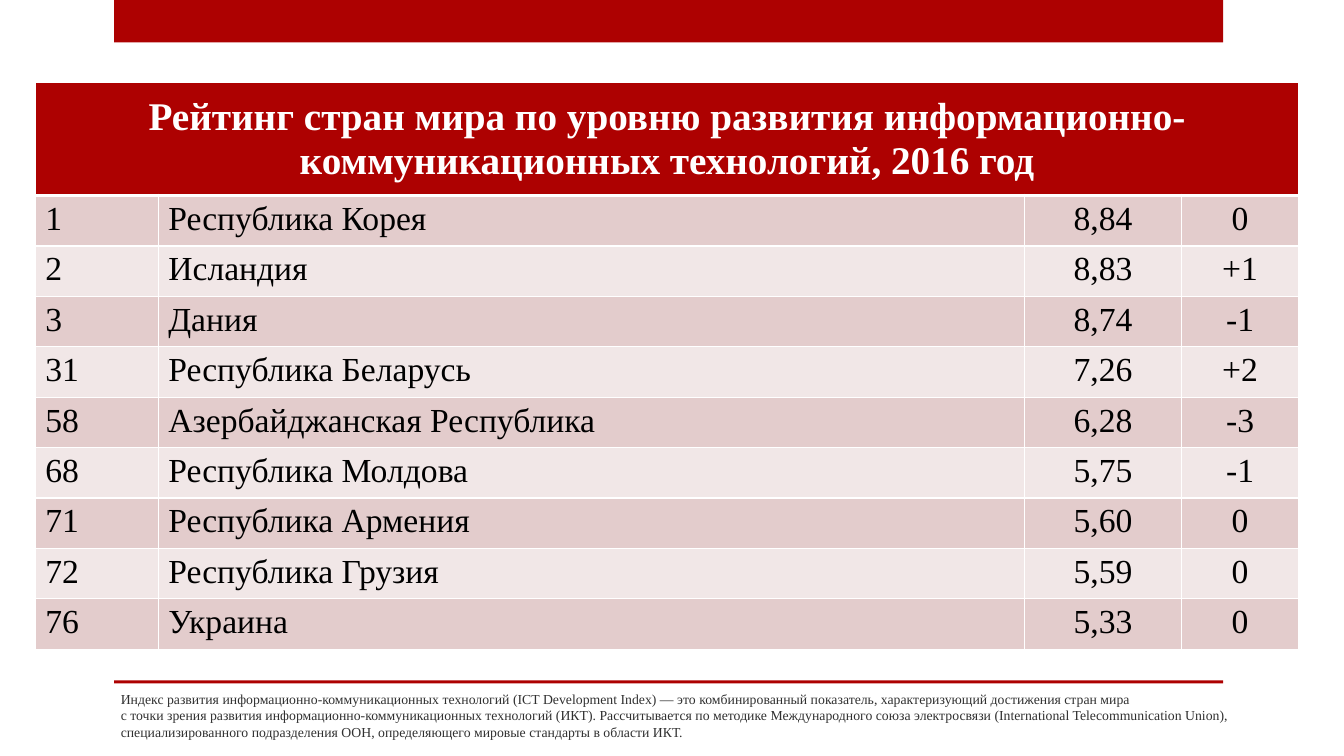
from copy import deepcopy

from lxml.etree import SubElement
from pptx import Presentation
from pptx.dml.color import RGBColor
from pptx.enum.shapes import MSO_SHAPE
from pptx.enum.text import MSO_ANCHOR, PP_ALIGN
from pptx.oxml.ns import qn
from pptx.util import Inches, Pt

WIDE, HIGH = 13.33, 7.5
RED, WHITE, BLACK, GREY = "AD0101", "FFFFFF", "000000", "303030"
BANDS = "E3CCCC", "F1E7E7"
COLS = 1.22, 8.59, 1.56, 1.16
HEAD, ROW = 1.12, 0.5
TITLE = ("Рейтинг стран мира по уровню развития "
         "информационно-коммуникационных технологий, 2016 год")
RANKS = [
    ("1", "Республика Корея", "8,84", "0"),
    ("2", "Исландия", "8,83", "+1"),
    ("3", "Дания", "8,74", "-1"),
    ("31", "Республика Беларусь", "7,26", "+2"),
    ("58", "Азербайджанская Республика", "6,28", "-3"),
    ("68", "Республика Молдова", "5,75", "-1"),
    ("71", "Республика Армения", "5,60", "0"),
    ("72", "Республика Грузия", "5,59", "0"),
    ("76", "Украина", "5,33", "0"),
]
NOTE = (
    "Индекс развития информационно-коммуникационных технологий (ICT Development Index) — "
    "это комбинированный показатель, характеризующий достижения стран мира\n"
    "с точки зрения развития информационно-коммуникационных технологий (ИКТ). "
    "Рассчитывается по методике Международного союза электросвязи "
    "(International Telecommunication Union),\n"
    "специализированного подразделения ООН, определяющего мировые стандарты в области ИКТ."
)


def paint(fill, color):
    fill.solid()
    fill.fore_color.rgb = RGBColor.from_string(color)


def write(frame, text, size=24, color=BLACK, bold=False, align=PP_ALIGN.LEFT, before=0, after=0):
    """Fill a text frame with one paragraph; newlines become line breaks."""
    para = frame.paragraphs[0]
    para.text = text
    para.alignment = align
    para.space_before, para.space_after = Pt(before), Pt(after)
    for run in para.runs:
        font = run.font
        font.name, font.size, font.bold = "Times New Roman", Pt(size), bold
        font.color.rgb = RGBColor.from_string(color)
    for gap in para._p.findall(qn("a:br")):
        gap.insert(0, deepcopy(para.runs[0]._r.rPr))


def edge(cell, low=1, top=1):
    """Draw white borders, with own widths for the bottom and top."""
    props = cell._tc.get_or_add_tcPr()
    sides = ("a:lnL", 1), ("a:lnR", 1), ("a:lnT", top), ("a:lnB", low)
    for spot, (tag, width) in enumerate(sides):
        line = SubElement(props, qn(tag), w=str(Pt(width)))
        fill = SubElement(line, qn("a:solidFill"))
        SubElement(fill, qn("a:srgbClr"), val=WHITE)
        props.insert(spot, line)


def add_bar(slide, top, high):
    side = 0.085 * WIDE
    bar = slide.shapes.add_shape(MSO_SHAPE.RECTANGLE, Inches(side), Inches(top),
                                 Inches(0.825 * WIDE), Inches(high))
    bar.shadow.inherit = False
    paint(bar.fill, RED)
    bar.line.fill.background()


def add_ranks(slide):
    table = slide.shapes.add_table(
        len(RANKS) + 1, len(COLS), Inches(0.35), Inches(0.82),
        Inches(sum(COLS)), Inches(HEAD + ROW * len(RANKS))).table
    for col, wide in zip(table.columns, COLS):
        col.width = Inches(wide)
    for num, row in enumerate(table.rows):
        row.height = Inches(ROW if num else HEAD)
    for cell in table.rows[0].cells:
        paint(cell.fill, RED)
        edge(cell, low=3)
    head = table.cell(0, 0)
    head.merge(table.cell(0, len(COLS) - 1))
    head.vertical_anchor = MSO_ANCHOR.MIDDLE
    write(head.text_frame, TITLE, size=28, color=WHITE, bold=True,
          align=PP_ALIGN.CENTER, before=6, after=6)
    for num, rank in enumerate(RANKS):
        for col, text in enumerate(rank):
            cell = table.cell(num + 1, col)
            paint(cell.fill, BANDS[num % 2])
            edge(cell, top=1 if num else 3)
            write(cell.text_frame, text,
                  align=PP_ALIGN.CENTER if col > 1 else PP_ALIGN.LEFT)


def add_note(slide):
    box = slide.shapes.add_textbox(Inches(1.1), Inches(0.91 * HIGH),
                                   Inches(11.66), Inches(0.072 * HIGH))
    frame = box.text_frame
    frame.word_wrap = True
    frame.vertical_anchor = MSO_ANCHOR.MIDDLE
    write(frame, NOTE, size=9.8, color=GREY)


def main():
    deck = Presentation()
    deck.slide_width, deck.slide_height = Inches(WIDE), Inches(HIGH)
    slide = deck.slides.add_slide(deck.slide_layouts[6])
    add_bar(slide, 0, 0.056 * HIGH)
    add_bar(slide, 0.9 * HIGH, 0.004 * HIGH)
    add_ranks(slide)
    add_note(slide)
    deck.save("out.pptx")


if __name__ == "__main__":
    main()
